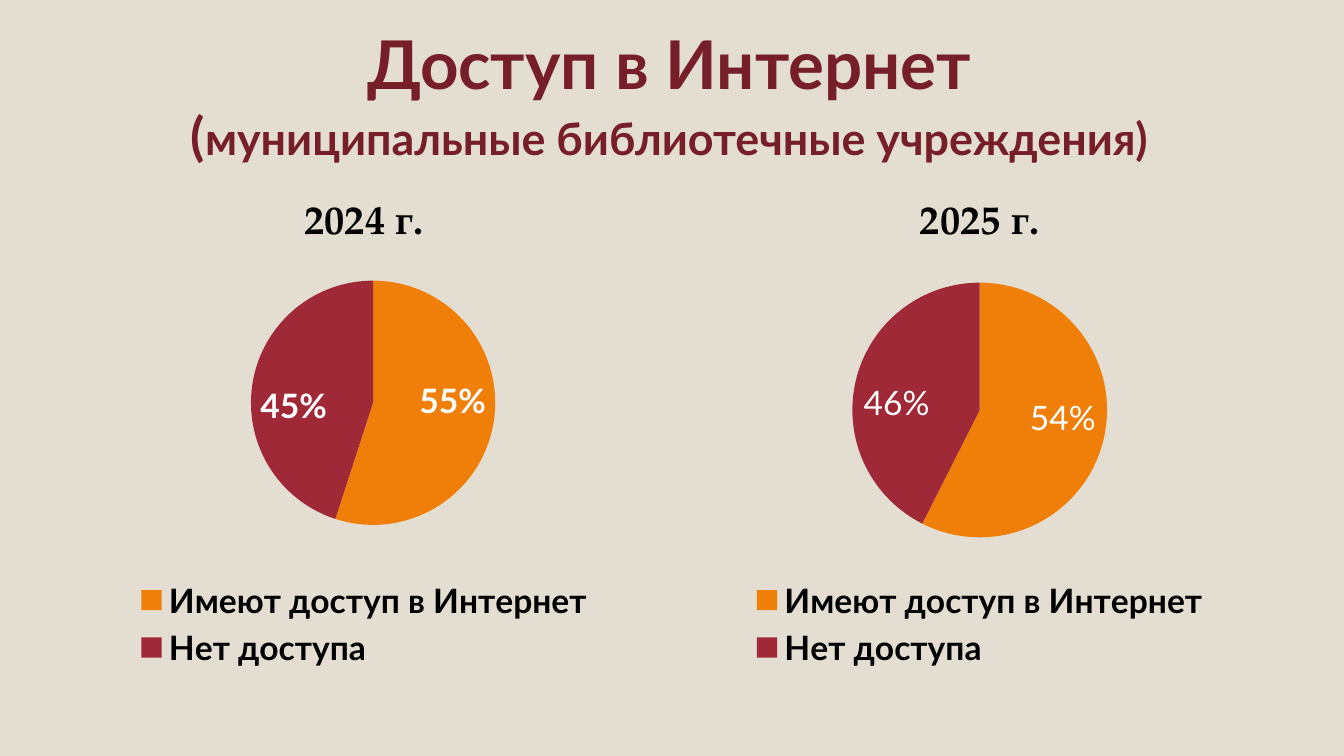
from lxml import etree
from pptx import Presentation
from pptx.chart.data import CategoryChartData
from pptx.dml.color import RGBColor
from pptx.enum.chart import XL_CHART_TYPE, XL_LABEL_POSITION, XL_LEGEND_POSITION
from pptx.enum.text import MSO_ANCHOR, PP_ALIGN
from pptx.oxml.ns import qn
from pptx.util import Inches, Pt

PIE = XL_CHART_TYPE.PIE
INSIDE_END = XL_LABEL_POSITION.INSIDE_END
BOTTOM = XL_LEGEND_POSITION.BOTTOM

BEIGE = RGBColor(0xE3, 0xDE, 0xD1)
MAROON = RGBColor(0x77, 0x1F, 0x28)
ORANGE = RGBColor(0xF0, 0x7F, 0x09)
RED = RGBColor(0x9F, 0x29, 0x36)
BLACK = RGBColor(0, 0, 0)
WHITE = RGBColor(0xFF, 0xFF, 0xFF)
SANS, SERIF = "Lato", "TeX Gyre Pagella"

# Content
HEADING = "Доступ в Интернет"
SUBHEADING = [("(", 28), ("муниципальные библиотечные учреждения)", 24)]
CATEGORIES = ["Имеют доступ в Интернет", "Нет доступа"]
SLICE_COLORS = [ORANGE, RED]
YEARS = [
    {"title": "2024 г.", "series": "Series 1", "values": [55, 45],
     "plot": {"x": 0.11, "y": 0.21, "w": 0.81, "h": 0.49}},
    {"title": "2025 г.", "series": "2025 г.", "values": [0.54, 0.4],
     "labels": ["54%", "46%"]},
]

# Two equal columns inside the side margins
SLIDE_W, MARGIN, GAP = 10, 0.5, 0.16
CHART_TOP, CHART_H = 1.31, 3.71
CHART_W = (SLIDE_W - 2 * MARGIN - GAP) / 2


def style(font, size, color, name=SANS, bold=True):
    font.size = Pt(size)
    font.color.rgb = color
    font.name = name
    font.bold = bold


def place_plot(chart, box):
    """Fix the inner plot area at fractions of the chart."""
    plot_area = chart._chartSpace.chart.plotArea
    for old in plot_area.findall(qn("c:layout")):
        plot_area.remove(old)
    layout = etree.Element(qn("c:layout"))
    manual = etree.SubElement(layout, qn("c:manualLayout"))
    settings = [("layoutTarget", "inner"), ("xMode", "edge"), ("yMode", "edge")]
    for tag, value in settings + list(box.items()):
        etree.SubElement(manual, qn(f"c:{tag}")).set("val", str(value))
    plot_area.insert(0, layout)


def add_pie(slide, year, left):
    data = CategoryChartData()
    data.categories = CATEGORIES
    data.add_series(year["series"], year["values"])
    chart = slide.shapes.add_chart(
        PIE, Inches(left), Inches(CHART_TOP), Inches(CHART_W), Inches(CHART_H), data
    ).chart
    style(chart.font, 18, BLACK, SERIF, bold=False)

    # Title and legend
    chart.has_title = True
    chart.chart_title.include_in_layout = False
    year_title = chart.chart_title.text_frame
    year_title.text = year["title"]
    style(year_title.paragraphs[0].font, 21.6, BLACK, SERIF)
    chart.has_legend = True
    chart.legend.position = BOTTOM
    chart.legend.include_in_layout = False
    style(chart.legend.font, 18, BLACK)

    # Slices and their labels
    series = chart.plots[0].series[0]
    for i, color in enumerate(SLICE_COLORS):
        fill = series.points[i].format.fill
        fill.solid()
        fill.fore_color.rgb = color
    custom = year.get("labels", [])
    labels = series.data_labels
    labels.show_percentage = not custom
    labels.show_value = bool(custom)
    labels.number_format = "0%"
    labels.number_format_is_linked = False
    labels.position = INSIDE_END
    style(labels.font, 18, WHITE)
    for i, text in enumerate(custom):
        label = series.points[i].data_label
        run = label.text_frame.paragraphs[0].add_run()
        run.text = text
        style(run.font, 18, WHITE, bold=False)
        label.position = INSIDE_END

    if "plot" in year:
        place_plot(chart, year["plot"])


def main():
    prs = Presentation()
    prs.slide_width = Inches(SLIDE_W)
    prs.slide_height = Inches(SLIDE_W * 9 / 16)
    slide = prs.slides.add_slide(prs.slide_layouts[5])
    slide.background.fill.solid()
    slide.background.fill.fore_color.rgb = BEIGE

    # Heading
    title = slide.shapes.title
    title.left, title.top = Inches(0), Inches(0.23)
    title.width, title.height = Inches(9.96), Inches(0.94)
    title.text_frame.vertical_anchor = MSO_ANCHOR.MIDDLE
    heading = title.text_frame.paragraphs[0]
    heading.alignment = PP_ALIGN.CENTER
    style(heading.font, 36, MAROON)
    heading.add_run().text = HEADING
    heading.add_line_break()
    for text, size in SUBHEADING:
        run = heading.add_run()
        run.text = text
        run.font.size = Pt(size)

    # Charts
    for i, year in enumerate(YEARS):
        add_pie(slide, year, MARGIN + i * (CHART_W + GAP))

    prs.save("out.pptx")


if __name__ == "__main__":
    main()
